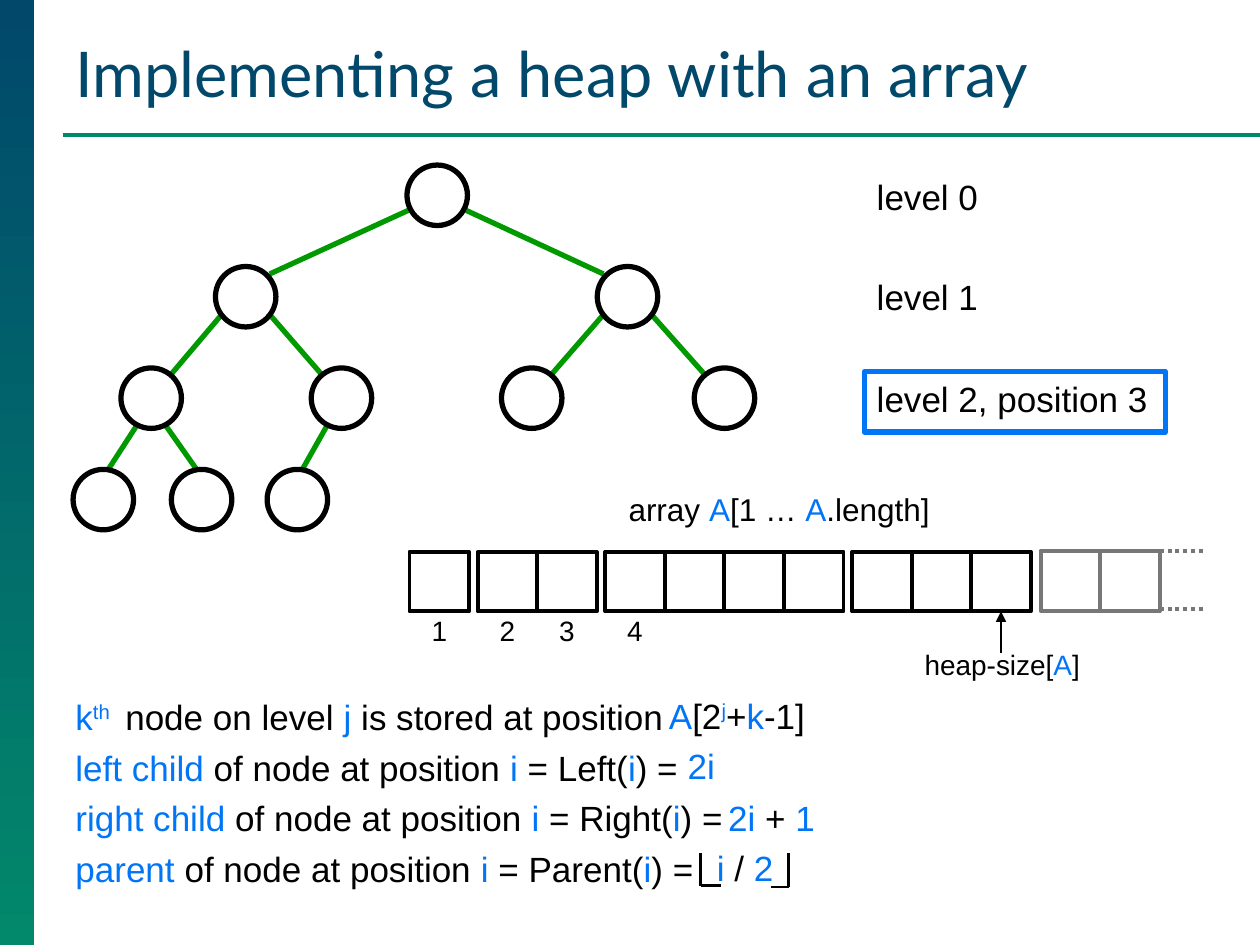
from dataclasses import dataclass

from lxml.etree import SubElement
from pptx import Presentation
from pptx.dml.color import RGBColor
from pptx.enum.dml import MSO_LINE_DASH_STYLE as Dash
from pptx.enum.shapes import MSO_CONNECTOR as Connector, MSO_SHAPE as Preset
from pptx.enum.text import MSO_ANCHOR as Anchor, PP_ALIGN as Align
from pptx.oxml.ns import qn
from pptx.util import Inches, Pt


@dataclass(frozen=True)
class Theme:
    navy: str = "01486B"
    teal: str = "02886B"
    accent: str = "0075F6"
    ink: str = "000000"
    edge: str = "009900"
    unused: str = "777777"
    heading_font: str = "Lato"
    body_font: str = "Arial"
    title: int = 36
    body: int = 20
    caption: int = 18
    small: int = 16
    thick: float = 3
    medium: float = 2.25
    fine: float = 1.5
    hair: float = 0.75


def grid(*cells):
    """Turn columns and rows of a 100 by 75 grid into slide lengths."""
    return [Inches(cell / 10) for cell in cells]


def write(frame, text, size, font, color, accent=None, align=Align.LEFT,
          anchor=Anchor.TOP, spacing=0, hanging=0):
    """Fill a frame; |...| marks the accent colour and ^...^ a superscript."""
    frame.word_wrap = True
    frame.vertical_anchor = anchor
    for number, line in enumerate(text.split("\n")):
        paragraph = frame.add_paragraph() if number else frame.paragraphs[0]
        paragraph.alignment = align
        if number:
            paragraph.space_before = Pt(spacing)
        if hanging:
            indent, = grid(hanging)
            properties = paragraph._p.get_or_add_pPr()
            properties.set("marL", str(indent))
            properties.set("indent", str(-indent))
        for part, colored in enumerate(line.split("|")):
            for level, words in enumerate(colored.split("^")):
                if not words:
                    continue
                run = paragraph.add_run()
                run.text = words
                run.font.size = Pt(size)
                run.font.name = font
                run.font.color.rgb = RGBColor.from_string(accent if part % 2 else color)
                if level % 2:
                    run._r.get_or_add_rPr().set("baseline", "30000")


class Board:
    def __init__(self, slide, theme):
        self.slide = slide
        self.theme = theme

    def outline(self, preset, box, color, width):
        shape = self.slide.shapes.add_shape(preset, *grid(*box))
        shape.shadow.inherit = False
        shape.fill.background()
        shape.line.color.rgb = RGBColor.from_string(color)
        shape.line.width = Pt(width)
        return shape

    def gradient_bar(self, box, top, bottom):
        bar = self.slide.shapes.add_shape(Preset.RECTANGLE, *grid(*box))
        bar.shadow.inherit = False
        bar.line.fill.background()
        bar.fill.gradient()
        bar.fill.gradient_angle = 270
        for stop, color in zip(bar.fill.gradient_stops, (top, bottom)):
            stop.color.rgb = RGBColor.from_string(color)

    def line(self, start, end, color, width, dash=None, arrow=False):
        line = self.slide.shapes.add_connector(Connector.STRAIGHT, *grid(*start, *end))
        line.line.color.rgb = RGBColor.from_string(color)
        line.line.width = Pt(width)
        if dash:
            line.line.dash_style = dash
        if arrow:
            SubElement(line.line._get_or_add_ln(), qn("a:tailEnd"), type="triangle")
        SubElement(line._element.spPr, qn("a:effectLst"))
        return line

    def text(self, box, words, size=None, font=None, color=None, **layout):
        frame = self.slide.shapes.add_textbox(*grid(*box)).text_frame
        self.fill_text(frame, words, size, font, color, **layout)

    def fill_text(self, frame, words, size=None, font=None, color=None, **layout):
        theme = self.theme
        write(frame, words, size or theme.body, font or theme.body_font,
              color or theme.ink, accent=theme.accent, **layout)


RADIUS = 2.4
LEVEL_TOP, LEVEL_STEP = 15.5, 8.05
NODE_COLUMNS = [[34.7], [19.5, 49.8], [12, 27.1, 42.2, 57.5], [8.2, 16, 23.6]]
# Per level: edge end beside the parent's centre, then beside the child's centre
EDGE_ENDS = [((2.3, 1.2), (1.9, -1.8)),
             ((1.8, 1.3), (1.5, -1.8)),
             ((1.1, 2.1), (0.4, -2.4))]
CELL, LEVEL_GAP = 4.73, 0.67
ARRAY_LEFT, ARRAY_TOP = 32.5, 43.8


def draw_tree(board):
    theme = board.theme
    rows = [LEVEL_TOP + LEVEL_STEP * level for level in range(len(NODE_COLUMNS))]
    for level, ((out_x, out_y), (in_x, in_y)) in enumerate(EDGE_ENDS):
        for index, child in enumerate(NODE_COLUMNS[level + 1]):
            parent = NODE_COLUMNS[level][index // 2]
            side = 1 if index % 2 else -1
            board.line((parent + side * out_x, rows[level] + out_y),
                       (child - side * in_x, rows[level + 1] + in_y),
                       theme.edge, theme.thick)
    for row, columns in zip(rows, NODE_COLUMNS):
        for column in columns:
            board.outline(Preset.OVAL,
                          (column - RADIUS, row - RADIUS, 2 * RADIUS, 2 * RADIUS),
                          theme.ink, theme.thick)


def draw_levels(board):
    theme = board.theme
    for row, label in ((13.4, "level 0"), (21.4, "level 1")):
        board.text((68.6, row, 23.9, 4.3), label)
    highlight = board.outline(Preset.RECTANGLE, (68.6, 29.5, 23.9, 4.8),
                              theme.accent, theme.thick)
    board.fill_text(highlight.text_frame, "level 2, position 3")


def draw_array(board):
    theme = board.theme
    board.text((48.9, 38.4, 27, 4), "array |A|[1 … |A|.length]", theme.caption)
    left, position = ARRAY_LEFT, 0
    for columns in NODE_COLUMNS:
        for _ in columns:
            last_cell = board.outline(Preset.RECTANGLE, (left, ARRAY_TOP, CELL, CELL),
                                      theme.ink, theme.medium)
            position += 1
            if position <= 4:
                board.text((left, 48.2, CELL, 3.7), str(position), theme.small,
                           align=Align.CENTER)
            left += CELL
        left += LEVEL_GAP
    heap_end = left - LEVEL_GAP - CELL / 2
    for index in range(2):
        board.outline(Preset.RECTANGLE, (82.6 + index * CELL, 43.7, CELL, 4.8),
                      theme.unused, theme.medium)
    for row in (43.7, 48.3):
        board.line((92.05, row), (95.55, row), theme.unused, theme.medium,
                   dash=Dash.ROUND_DOT)
    board.text((72.4, 50.9, 14.4, 3.7), "heap-size[|A|]", theme.small)
    pointer = board.line((heap_end, 51.8), (heap_end, ARRAY_TOP + CELL),
                         theme.ink, theme.hair, arrow=True)
    pointer.end_connect(last_cell, 2)


def draw_rules(board):
    theme = board.theme
    board.text((5, 54.7, 89.2, 17.5),
               "|k^th ^| node on level| j |is stored at position\n"
               "|left child| of node at position| i |= Left(|i|) =\n"
               "|right child| of node at position |i |= Right(|i|) =\n"
               "|parent |of node at position |i |= Parent(|i|) =",
               spacing=5, hanging=3.8)
    answers = [((52.1, 54.6, 12.9, 4.4), "|A|[2|^j^|+|k|-1]"),
               ((53.6, 58.6, 13.9, 4.3), "|2i|"),
               ((56.8, 62.7, 13.9, 4.3), "|2i |+| 1|"),
               ((55.9, 66.7, 8.9, 4.3), "|i| / |2|")]
    for box, answer in answers:
        board.text(box, answer)
    for column, foot, base in ((55.6, 57.2, 70.3), (62.6, 61.2, 70.4)):
        board.line((column, 67.7), (column, base), theme.ink, theme.fine)
        board.line((column, base), (foot, base), theme.ink, theme.fine)


def main():
    deck = Presentation()
    deck.slide_width, deck.slide_height = grid(100, 75)
    theme = Theme()
    board = Board(deck.slides.add_slide(deck.slide_layouts[6]), theme)
    board.gradient_bar((0, 0, 2.7, 75), theme.navy, theme.teal)
    board.line((5, 10.7), (100, 10.7), theme.teal, theme.medium)
    board.text((5, 2.1, 92.8, 7.1), "Implementing a heap with an array", theme.title,
               theme.heading_font, theme.navy, anchor=Anchor.BOTTOM)
    draw_tree(board)
    draw_levels(board)
    draw_array(board)
    draw_rules(board)
    deck.save("out.pptx")


if __name__ == "__main__":
    main()
